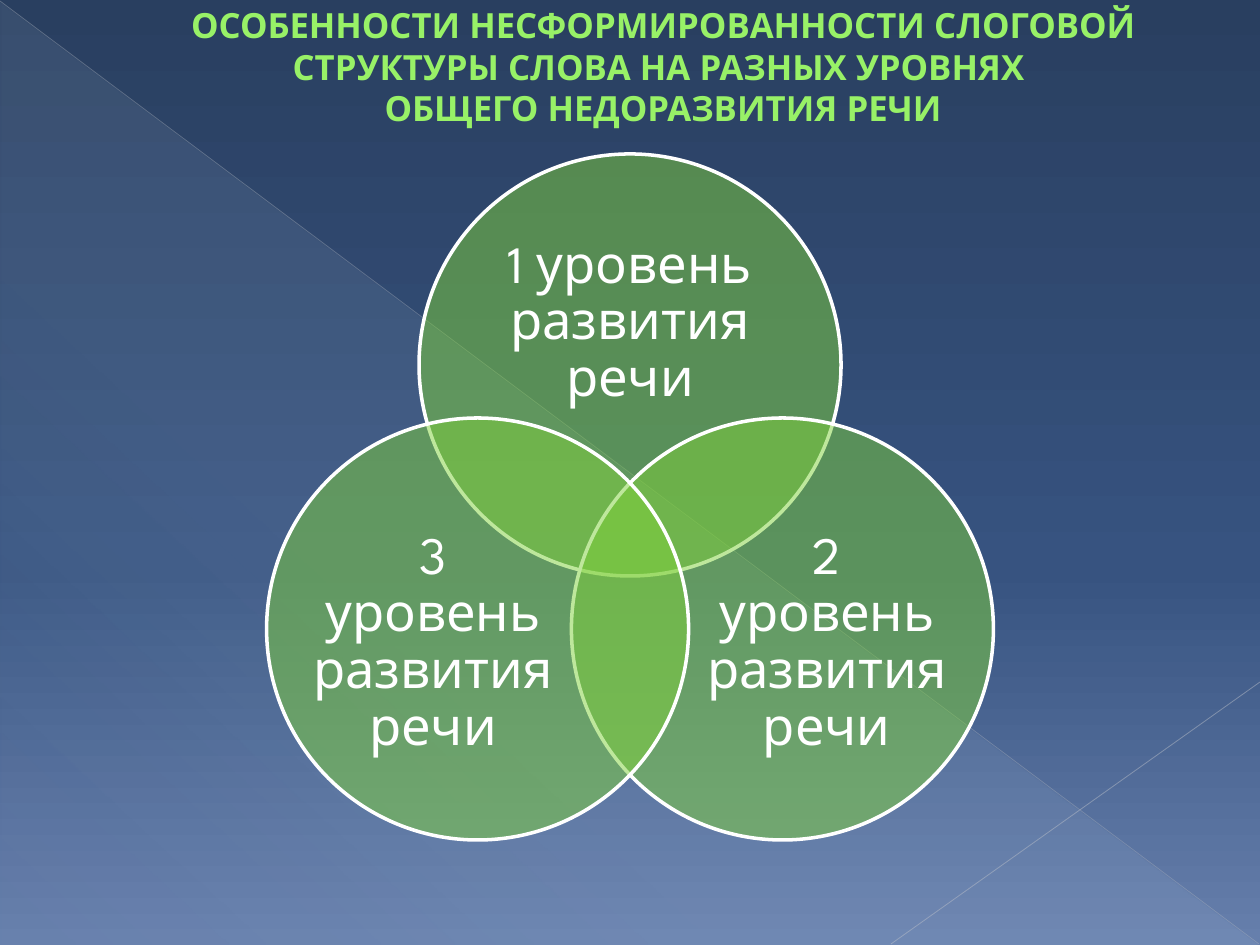
import math

from lxml import etree
from pptx import Presentation
from pptx.dml.color import RGBColor
from pptx.enum.shapes import MSO_CONNECTOR, MSO_SHAPE
from pptx.enum.text import MSO_ANCHOR, PP_ALIGN
from pptx.oxml import parse_xml
from pptx.oxml.ns import nsdecls, qn
from pptx.util import Emu, Pt

STRAIGHT = MSO_CONNECTOR.STRAIGHT
OVAL = MSO_SHAPE.OVAL
TRIANGLE = MSO_SHAPE.RIGHT_TRIANGLE
MIDDLE = MSO_ANCHOR.MIDDLE
CENTER = PP_ALIGN.CENTER

PX_PER_INCH = 126
WIDTH, HEIGHT = 1260, 945


def px(n):
    return Emu(round(n * 914400 / PX_PER_INCH))


def rgb(color):
    return RGBColor.from_string(color)


def set_alpha(element, percent):
    """Make the first solid colour under element partly transparent."""
    color = element.find(".//" + qn("a:srgbClr"))
    etree.SubElement(color, qn("a:alpha"), val=str(percent * 1000))


def set_gradient(element, stops, angle):
    """Replace the first solid fill under element; stops are (position, colour, alpha)."""
    gs = "".join(
        f'<a:gs pos="{pos * 1000}"><a:srgbClr val="{color}">'
        f'<a:alpha val="{alpha * 1000}"/></a:srgbClr></a:gs>'
        for pos, color, alpha in stops)
    grad = parse_xml(f'<a:gradFill {nsdecls("a")} rotWithShape="1"><a:gsLst>{gs}</a:gsLst>'
                     f'<a:lin ang="{angle * 60000}" scaled="0"/></a:gradFill>')
    solid = element.find(".//" + qn("a:solidFill"))
    solid.getparent().replace(solid, grad)


class Deck:
    font = "League Spartan"
    white = "FFFFFF"
    title_color = "98F167"
    title_outline = "589129"
    circle_fill = "7FD13B"

    def __init__(self):
        self.prs = Presentation()
        self.prs.slide_width, self.prs.slide_height = px(WIDTH), px(HEIGHT)
        self.s = self.prs.slides.add_slide(self.prs.slide_layouts[6])

    def background(self, stops, angle):
        fill = self.s.background.fill
        fill.solid()
        fill.fore_color.rgb = rgb(self.white)
        set_gradient(self.s.element, stops, angle)

    def shape(self, kind, x, y, w, h, fill):
        sp = self.s.shapes.add_shape(kind, px(x), px(y), px(w), px(h))
        sp.shadow.inherit = False
        sp.fill.solid()
        sp.fill.fore_color.rgb = rgb(fill)
        sp.line.fill.background()
        return sp

    def glow(self, x, y, w, h, stops, angle):
        """Right triangle filled with a faint gradient."""
        sp = self.shape(TRIANGLE, x, y, w, h, self.white)
        set_gradient(sp.element, stops, angle)

    def circle(self, cx, cy, d):
        sp = self.shape(OVAL, cx - d / 2, cy - d / 2, d, d, self.circle_fill)
        set_alpha(sp.element, 50)
        sp.line.color.rgb = rgb(self.white)
        sp.line.width = Pt(2)

    def line(self, x1, y1, x2, y2, color, width, alpha):
        ln = self.s.shapes.add_connector(STRAIGHT, px(x1), px(y1), px(x2), px(y2))
        ln.line.color.rgb = rgb(color)
        ln.line.width = Pt(width)
        set_alpha(ln.element, alpha)
        etree.SubElement(ln.element.spPr, qn("a:effectLst"))

    def text(self, x, y, w, h, lines, size, color, bold=False, spacing=1.0, outline=None):
        box = self.s.shapes.add_textbox(px(x), px(y), px(w), px(h))
        tf = box.text_frame
        tf.word_wrap = True
        tf.vertical_anchor = MIDDLE
        tf.margin_left = tf.margin_right = tf.margin_top = tf.margin_bottom = 0
        p = tf.paragraphs[0]
        p.alignment = CENTER
        p.line_spacing = spacing
        for i, line in enumerate(lines):
            if i:
                p.add_line_break()
            r = p.add_run()
            r.text = line
            r.font.name = self.font
            r.font.size = Pt(size)
            r.font.bold = bold
            r.font.color.rgb = rgb(color)
            if outline:
                r.font.element.insert(0, self.outline(outline)) if hasattr(
                    r.font, "element") else r.font.fill  # fill keeps the plain colour

    def title(self, x, y, w, h, lines):
        self.text(x, y, w, h, lines, 19.8, self.title_color, bold=True)

    def label(self, cx, cy, w, h, line):
        self.text(cx - w / 2, cy - h / 2, w, h, [line], 30, self.white, spacing=0.9)


def main():
    deck = Deck()
    deck.background([(0, "293F60", 100), (60, "375380", 100), (100, "667FAC", 100)], 90)
    deck.glow(1, 2, 1258, 943, [(0, "D6ECFF", 10), (70, "D6ECFF", 8), (100, "D6ECFF", 1)], 133)
    deck.line(0, 1, 1259, 944, "B7BCC5", 0.39, 35)
    deck.line(1260, 682, 891, 944, "BFC3CB", 0.47, 45)
    deck.title(142, 4, 1042, 125, [
        "ОСОБЕННОСТИ НЕСФОРМИРОВАННОСТИ СЛОГОВОЙ СТРУКТУРЫ СЛОВА НА РАЗНЫХ УРОВНЯХ ",
        "ОБЩЕГО НЕДОРАЗВИТИЯ РЕЧИ"])

    # Circle centres sit on a ring, a third of a turn apart.
    ring_x, ring_y, ring_r, diameter = 630, 541, 176, 422
    labels = [("1", 630, 323, 310, 190), ("2", 827, 643, 253, 233), ("3", 433, 643, 253, 233)]
    for i, (level, cx, cy, w, h) in enumerate(labels):
        angle = math.radians(120 * i - 90)
        deck.circle(ring_x + ring_r * math.cos(angle), ring_y + ring_r * math.sin(angle), diameter)
        deck.label(cx, cy, w, h, f"{level} уровень развития речи")

    deck.prs.save("out.pptx")


if __name__ == "__main__":
    main()
